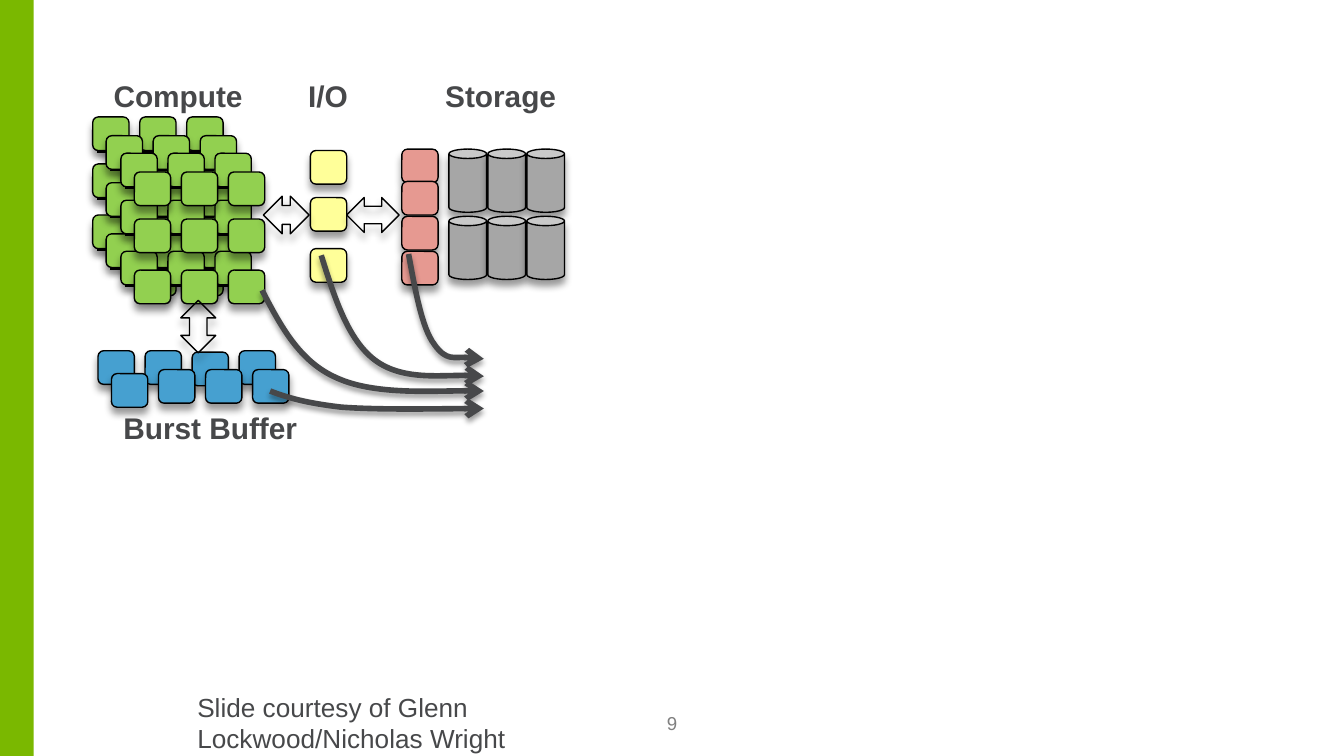
from lxml import etree
from pptx import Presentation
from pptx import util as u
from pptx.dml.color import RGBColor
from pptx.enum import shapes, text
from pptx.oxml.ns import qn

PX = 9144  # EMU per px, 100 px to the inch
BLACK = RGBColor(0x00, 0x00, 0x00)
INK = RGBColor(0x47, 0x48, 0x4A)
GRAY = RGBColor(0x80, 0x80, 0x80)
LIME = RGBColor(0x7A, 0xB8, 0x00)
GREEN = RGBColor(0x92, 0xD0, 0x50)
YELLOW = RGBColor(0xFF, 0xFF, 0x99)
RED = RGBColor(0xE6, 0x99, 0x91)
STEEL = RGBColor(0xA6, 0xA6, 0xA6)
BLUE = RGBColor(0x46, 0xA0, 0xD0)

KIND = shapes.MSO_SHAPE
NODE_W, NODE_H = 27, 25
COLS = (0, 35, 70)
ROWS = (0, 35, 73)
LAST = 108  # top of the fourth row in the rear layer


def px(n):
    return u.Emu(int(n * PX))


def shade(shape, blur, dist):
    """Give the shape a soft black shadow straight below it."""
    props = shape.element.find(qn("p:spPr"))
    glow = etree.SubElement(props, qn("a:effectLst"))
    drop = etree.SubElement(glow, qn("a:outerShdw"), blurRad=str(u.Pt(blur)),
                            dist=str(u.Pt(dist)), dir="5400000",
                            rotWithShape="0")
    tint = etree.SubElement(drop, qn("a:srgbClr"), val=str(BLACK))
    etree.SubElement(tint, qn("a:alpha"), val="40000")


def block(slide, kind, x, y, w, h, fill=None):
    shape = slide.shapes.add_shape(kind, px(x), px(y), px(w), px(h))
    if fill is None:
        shape.fill.background()
    else:
        shape.fill.solid()
        shape.fill.fore_color.rgb = fill
    shape.line.color.rgb = BLACK
    shape.line.width = u.Pt(0.75)
    shade(shape, 4, 3.4)
    return shape


def node(slide, x, y, fill):
    return block(slide, KIND.ROUNDED_RECTANGLE, x, y, NODE_W, NODE_H, fill)


def wire(slide, x1, y1, x2, y2):
    line = slide.shapes.add_connector(shapes.MSO_CONNECTOR.STRAIGHT,
                                      px(x1), px(y1), px(x2), px(y2))
    line.line.color.rgb = BLACK
    line.line.width = u.Pt(0.85)
    shade(line, 3, 2)
    return line


def label(slide, words, x, y, w, h, size=16, bold=True, color=INK,
          align=text.PP_ALIGN.CENTER, wrap=True):
    box = slide.shapes.add_textbox(px(x), px(y), px(w), px(h))
    frame = box.text_frame
    frame.word_wrap = wrap
    para = frame.paragraphs[0]
    para.alignment = align
    run = para.add_run()
    run.text = words
    run.font.name = "Arial"
    run.font.size = u.Pt(size)
    run.font.bold = bold
    run.font.color.rgb = color
    return frame


def layer(slide, x, y, rear, front):
    """Place one sheet of nodes, with its wires unless it is in front."""
    posts = []
    if not front:
        mid = x + NODE_W / 2
        posts = [wire(slide, mid + dx, y + LAST, mid + dx, y + NODE_H)
                 for dx in COLS]
    for i, dx in enumerate(COLS):
        stack = [node(slide, x + dx, y + dy, GREEN) for dy in ROWS]
        if posts:
            posts[i].end_connect(stack[0], 2)
        if rear and i > 0:
            foot = node(slide, x + dx, y + LAST, GREEN)
            posts[i].begin_connect(foot, 0)
    if not front:
        for dy in ROWS:
            wire(slide, x + 80, y + dy + 26, x + 3, y + dy + 26)


def compute(slide, x, y):
    for i in range(4):
        layer(slide, x + round(i * 10.33), y + round(i * 13.67),
              i == 0, i == 3)
    label(slide, "Compute", x - 9, y - 34, 145, 37)


def in_out(slide, x, y):
    for dy in ROWS:
        node(slide, x, y + dy, YELLOW)
    label(slide, "I/O", x - 12, y - 59, 50, 37, wrap=False)


def storage(slide, x, y):
    for dy in (0, 24, 50, 76):
        node(slide, x, y + dy, RED)
    for dy in (0, 50):
        for i in range(3):
            block(slide, KIND.CAN, x + 35 + 29 * i, y + dy, 28, 47, STEEL)
    label(slide, "Storage", x - 2, y - 58, 151, 37)


def buffer(slide, x, y):
    label(slide, "Burst Buffer", x + 8, y + 39, 151, 37, wrap=False)
    for dx, tops in ((0, (0, 0, 1, 0)), (10, (17, 14, 14, 14))):
        for i, dy in enumerate(tops):
            node(slide, x + dx + 35 * i, y + dy, BLUE)


def links(slide, x, y):
    """Place the two-way arrows between the regions."""
    kind = KIND.LEFT_RIGHT_ARROW
    block(slide, kind, x + 62, y + 1, 39, 26)
    block(slide, kind, x, y, 34, 28)
    block(slide, kind, x - 68, y + 84, 39, 26).rotation = 90


def curve(slide, x, y, start, points):
    """Draw a thick Bezier arrow; points come in threes."""
    pen = slide.shapes.build_freeform(*start, scale=PX)
    pen.add_line_segments(points, close=False)
    shape = pen.convert_to_shape(px(x), px(y))
    track = shape.element.find(".//" + qn("a:path"))
    for i, leg in enumerate(track.findall(qn("a:lnTo"))):
        if i % 3 == 0:
            bend = etree.SubElement(track, qn("a:cubicBezTo"))
        bend.append(leg[0])
        track.remove(leg)
    shape.fill.background()
    shape.line.color.rgb = INK
    shape.line.width = u.Pt(3)
    edge = shape.element.find(".//" + qn("a:ln"))
    etree.SubElement(edge, qn("a:tailEnd"), type="arrow")
    shade(shape, 3, 2)


def flows(slide, x, y):
    for start, *points in (
        ((109, 0), (114, 27), (119, 55), (128, 67),
         (137, 80), (158, 76), (165, 78)),
        ((44, 1), (54, 33), (64, 64), (84, 79),
         (104, 94), (150, 89), (165, 91)),
        ((0, 27), (14, 54), (28, 80), (55, 92),
         (83, 105), (145, 101), (165, 102)),
        ((6, 102), (19, 107), (33, 111), (59, 114),
         (86, 116), (145, 115), (165, 115)),
    ):
        curve(slide, x, y, start, points)


def frame(slide, w, h):
    """Place the side bar, the page number and the credit line."""
    bar = slide.shapes.add_shape(KIND.RECTANGLE, 0, 0, px(25), px(h))
    bar.shadow.inherit = False
    bar.fill.solid()
    bar.fill.fore_color.rgb = LIME
    bar.line.fill.background()
    page = label(slide, "9", w // 2 - 25, h - 31, 50, 15, 10, False, GRAY)
    page.vertical_anchor = text.MSO_ANCHOR.BOTTOM
    page.margin_left = page.margin_right = page.margin_bottom = 0
    label(slide, "Slide courtesy of Glenn Lockwood/Nicholas Wright",
          137, h - 53, 256, 57, 14, False, align=text.PP_ALIGN.LEFT)


def main():
    deck = Presentation()
    w, h = 1000, 1000 * 9 / 16
    deck.slide_width, deck.slide_height = px(w), px(h)
    slide = deck.slides.add_slide(deck.slide_layouts[6])
    frame(slide, w, h)
    compute(slide, 69, 87)
    in_out(slide, 231, 112)
    storage(slide, 299, 111)
    buffer(slide, 73, 261)
    links(slide, 196, 146)
    flows(slide, 195, 189)
    deck.save("out.pptx")


if __name__ == "__main__":
    main()
